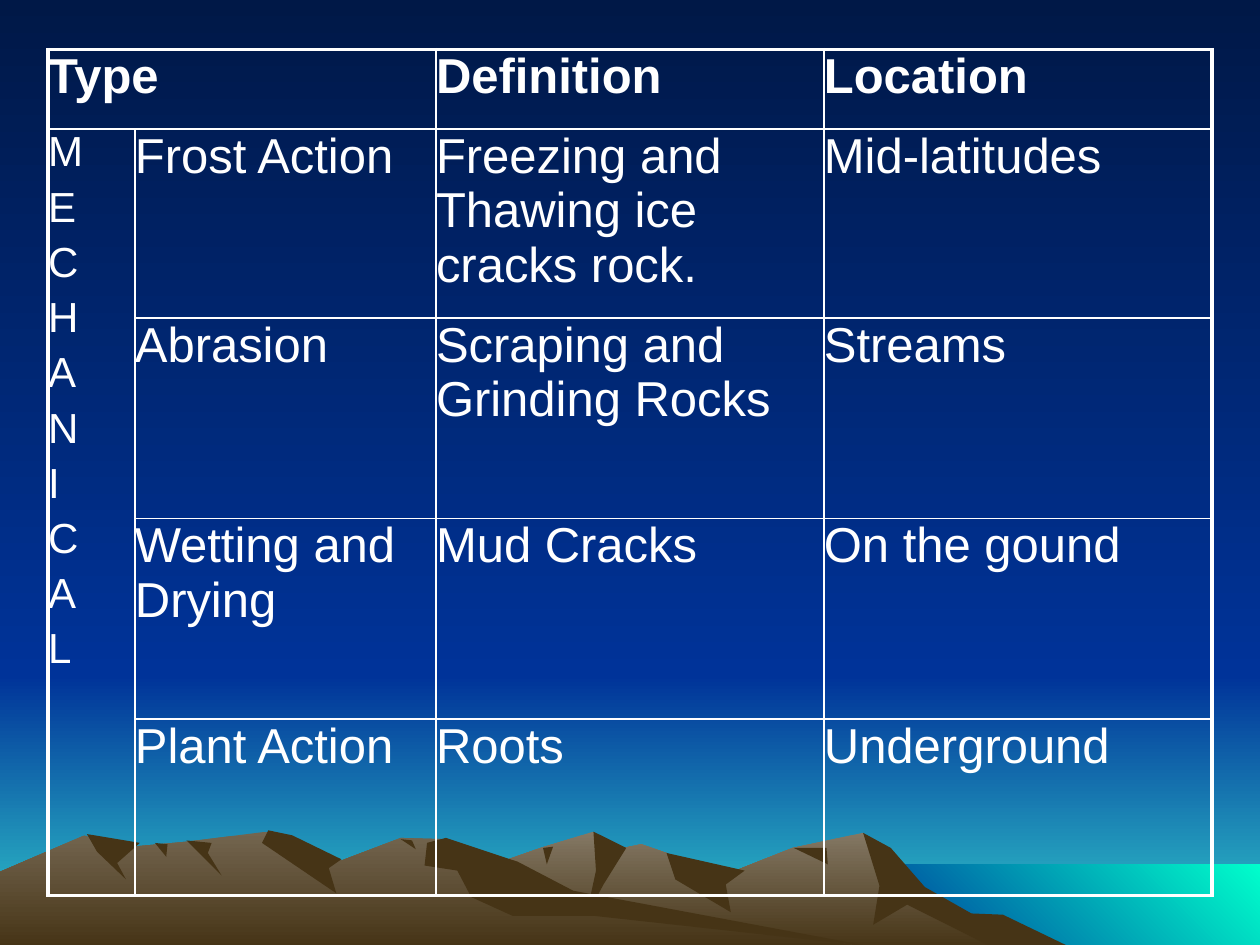
import pptx
import pptx.util
import pptx.oxml
import pptx.oxml.ns
import pptx.dml.color
import pptx.enum.shapes

Cm, Pt = pptx.util.Cm, pptx.util.Pt
RGB = pptx.dml.color.RGBColor

WHITE = RGB(0xFF, 0xFF, 0xFF)
NIGHT = RGB(0x00, 0x18, 0x47)
BLUE = RGB(0x00, 0x33, 0x99)
TEAL = RGB(0x33, 0xCC, 0xCC)
AQUA = RGB(0x00, 0xFF, 0xCC)
STONE = RGB(0x84, 0x78, 0x64)
CLAY = RGB(0x73, 0x65, 0x4F)
BROWN = RGB(0x46, 0x34, 0x16)

FONT = "Arial"
DOWN, RISE = 270, 45
THIN, THICK = 1, 2.25
WIDE, HIGH = 25.4, 19.05
DUSK = 13.61

# Table content
HEADS = ["Type", "Definition", "Location"]
SIDE = "MECHANICAL"
ROWS = [
    ("Frost Action", "Freezing and Thawing ice cracks rock.", "Mid-latitudes"),
    ("Abrasion", "Scraping and Grinding Rocks", "Streams"),
    ("Wetting and Drying", "Mud Cracks", "On the gound"),
    ("Plant Action", "Roots", "Underground"),
]
WIDTHS = [1.75, 6.07, 7.82, 7.82]
HEIGHTS = [1.6, 3.81, 4.04, 4.04, 3.56]
LEFT, TOP = 0.97, 1

# Sky and sea: left and top in cm, bottom, colours, angle
BANDS = [
    (0, DUSK, HIGH, (BLUE, TEAL), DOWN),
    (0, 0, DUSK, (NIGHT, BLUE), DOWN),
    (17.35, 17.42, HIGH, (BLUE, AQUA), RISE),
]

# Mountains, back to front: corners in hundredths of an inch
FAR = [(258, 752), (355, 699), (429, 673), (471, 660), (485, 675),
       (509, 670), (529, 677), (566, 698), (629, 673), (685, 661),
       (723, 699), (764, 725), (850, 752)]
NEAR = [(0, 752), (0, 692), (67, 663), (94, 673), (148, 668), (212, 660),
        (271, 683), (318, 665), (354, 666), (432, 714), (690, 752)]
FARDARK = [
    [(685, 661), (707, 673), (734, 704), (771, 725), (796, 726), (850, 752),
     (788, 752), (720, 718), (693, 734), (698, 703)],
    [(471, 660), (497, 673), (479, 702), (465, 728), (473, 691)],
    [(529, 677), (591, 691), (576, 702), (580, 724), (536, 698)],
    [(630, 673), (656, 673), (657, 686)],
    [(431, 673), (439, 672), (434, 686)],
]
NEARDARK = [
    [(213, 659), (232, 663), (271, 682), (261, 689), (267, 709), (208, 669)],
    [(339, 669), (354, 665), (411, 684), (455, 707), (690, 751),
     (472, 727), (407, 727), (374, 712), (363, 691), (337, 687)],
    [(318, 666), (327, 667), (330, 674)],
    [(148, 667), (168, 669), (165, 677), (176, 695)],
    [(123, 669), (133, 670), (132, 680)],
    [(69, 662), (111, 669), (93, 685), (100, 698), (77, 676)],
]
HILLS = [((STONE, BROWN), [FAR]), ((BROWN,), FARDARK),
         ((CLAY, BROWN), [NEAR]), ((BROWN,), NEARDARK)]


def paint(fill, tones, angle=DOWN):
    if len(tones) == 1:
        fill.solid()
        fill.fore_color.rgb = tones[0]
        return
    fill.gradient()
    fill.gradient_angle = angle
    for stop, tone in zip(fill.gradient_stops, tones):
        stop.color.rgb = tone


def finish(shape, tones, angle=DOWN):
    shape.shadow.inherit = False
    shape.line.fill.background()
    paint(shape.fill, tones, angle)


def write(frame, lines, size=28, bold=False, gap=0):
    for i, line in enumerate(lines):
        para = frame.paragraphs[0] if i == 0 else frame.add_paragraph()
        if i:
            para.space_before = Pt(gap)
        run = para.add_run()
        run.text = line
        font = run.font
        font.name, font.size, font.bold = FONT, Pt(size), bold
        font.color.rgb = WHITE


def edge(cell, sides):
    props = cell._tc.get_or_add_tcPr()
    for i, (side, width) in enumerate(sides):
        props.insert(i, pptx.oxml.parse_xml(
            f'<a:ln{side} {pptx.oxml.ns.nsdecls("a")} w="{Pt(width)}">'
            f'<a:solidFill><a:srgbClr val="{WHITE}"/></a:solidFill>'
            f'</a:ln{side}>'))


def main():
    deck = pptx.Presentation()
    deck.slide_width, deck.slide_height = Cm(WIDE), Cm(HIGH)
    slide = deck.slides.add_slide(deck.slide_layouts[6])
    paint(slide.background.fill, (NIGHT, BLUE))
    shapes = slide.shapes

    # Scenery
    for left, top, base, tones, angle in BANDS:
        band = shapes.add_shape(
            pptx.enum.shapes.MSO_SHAPE.RECTANGLE,
            Cm(left), Cm(top), Cm(WIDE - left), Cm(base - top))
        finish(band, tones, angle)
    for tones, group in HILLS:
        for spots in group:
            pen = shapes.build_freeform(*spots[0], scale=Cm(2.54) / 100)
            pen.add_line_segments(spots[1:], close=True)
            finish(pen.convert_to_shape(), tones)

    # Table grid
    high, wide = len(HEIGHTS), len(WIDTHS)
    table = shapes.add_table(high, wide, Cm(LEFT), Cm(TOP),
                             Cm(sum(WIDTHS)), Cm(sum(HEIGHTS))).table
    table.first_row = table.horz_banding = False
    for col, width in zip(table.columns, WIDTHS):
        col.width = Cm(width)
    for row, height in zip(table.rows, HEIGHTS):
        row.height = Cm(height)
    table.cell(0, 0).merge(table.cell(0, 1))
    table.cell(1, 0).merge(table.cell(high - 1, 0))

    # Cell frames: heavy outside, light inside
    for r in range(high):
        for c in range(wide):
            cell = table.cell(r, c)
            cell.margin_left = cell.margin_right = 0
            cell.margin_top = cell.margin_bottom = 0
            cell.fill.background()
            outer = {"L": c == 0, "R": c + cell.span_width == wide,
                     "T": r == 0, "B": r + cell.span_height == high}
            edge(cell, [(s, THICK if o else THIN) for s, o in outer.items()])

    # Cell text
    for c, head in zip((0, 2, 3), HEADS):
        write(table.cell(0, c).text_frame, [head], bold=True)
    write(table.cell(1, 0).text_frame, SIDE, size=24, gap=4.8)
    for r, row in enumerate(ROWS, 1):
        for c, text in enumerate(row, 1):
            write(table.cell(r, c).text_frame, [text])

    deck.save("out.pptx")


if __name__ == "__main__":
    main()
